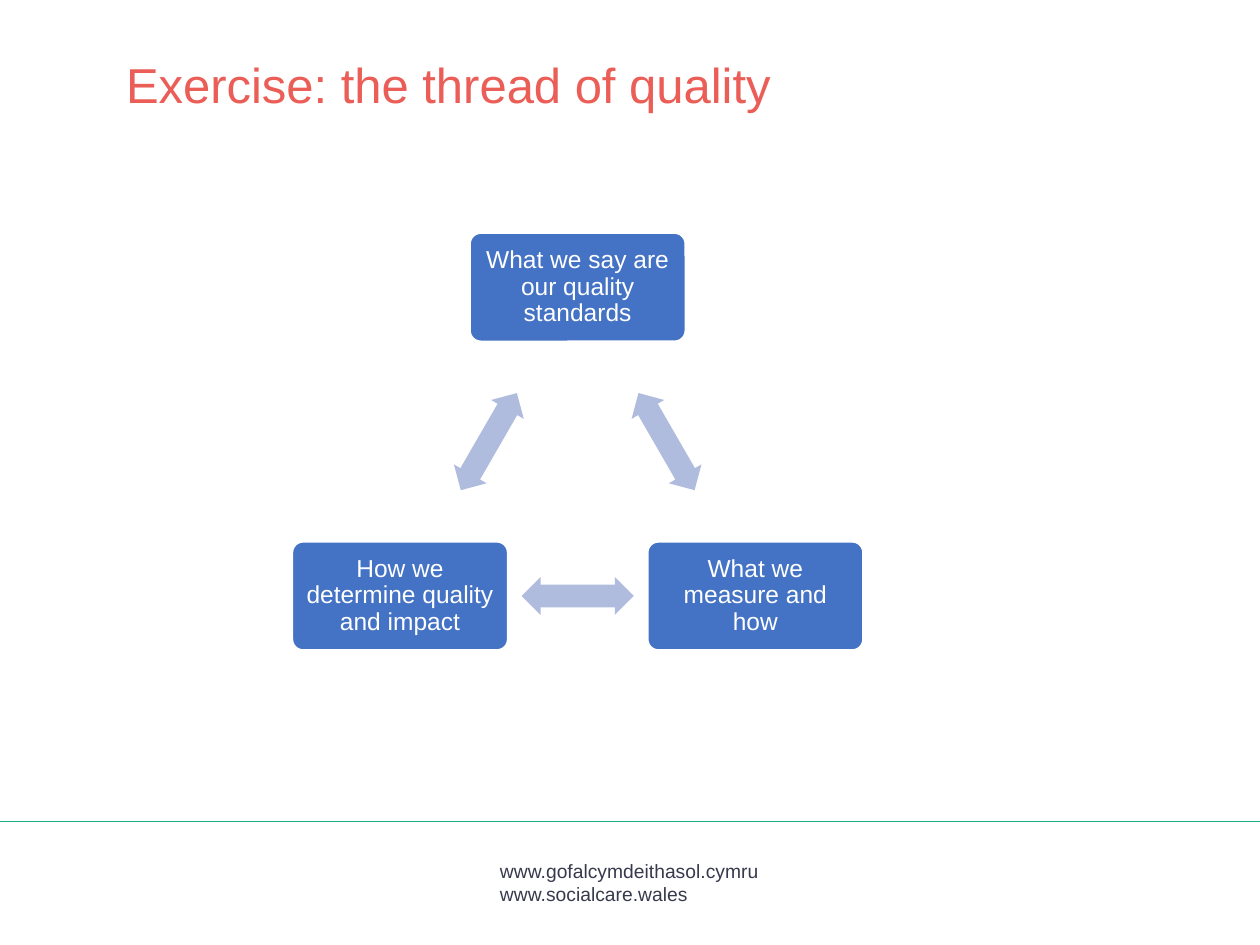
import math
from dataclasses import dataclass

import pptx
import pptx.dml.color
import pptx.enum.shapes
import pptx.enum.text
import pptx.oxml.ns
import pptx.util
from lxml import etree

Inches = pptx.util.Inches
Pt = pptx.util.Pt
SHAPE = pptx.enum.shapes.MSO_SHAPE
ANCHOR = pptx.enum.text.MSO_ANCHOR
ALIGN = pptx.enum.text.PP_ALIGN


def color(value):
    return pptx.dml.color.RGBColor.from_string(value)


@dataclass(frozen=True)
class Theme:
    font: str = "Arial"
    title: str = "EB5E57"
    node: str = "4472C4"
    arrow: str = "B0BCDE"
    white: str = "FFFFFF"
    rule: str = "16AD85"
    footer: str = "37394C"
    title_size: int = 28
    node_size: int = 14
    footer_size: int = 11


THEME = Theme()


def add_text(para, text, size, text_color):
    span = para.add_run()
    span.text = text
    span.font.name = THEME.font
    span.font.size = Pt(size)
    span.font.color.rgb = color(text_color)


def place_title(page, left, top, width, height, text):
    title = page.shapes.title
    title.left, title.top = Inches(left), Inches(top)
    title.width, title.height = Inches(width), Inches(height)
    frame = title.text_frame
    frame.word_wrap = True
    frame.vertical_anchor = ANCHOR.TOP
    para = frame.paragraphs[0]
    para.alignment = ALIGN.LEFT
    add_text(para, text, THEME.title_size, THEME.title)


def add_centred(page, kind, center, size, fill):
    left, top = (middle - length / 2 for middle, length in zip(center, size))
    shape = page.shapes.add_shape(kind, Inches(left), Inches(top), *map(Inches, size))
    shape.shadow.inherit = False
    shape.fill.solid()
    shape.fill.fore_color.rgb = color(fill)
    return shape


def add_node(page, center, size, text):
    node = add_centred(page, SHAPE.ROUNDED_RECTANGLE, center, size, THEME.node)
    node.adjustments[0] = 0.1
    node.line.color.rgb = color(THEME.white)
    node.line.width = Pt(1)
    frame = node.text_frame
    frame.word_wrap = True
    frame.vertical_anchor = ANCHOR.MIDDLE
    frame.margin_left = frame.margin_right = Inches(0.06)
    frame.margin_top = frame.margin_bottom = Inches(0.06)
    para = frame.paragraphs[0]
    para.alignment = ALIGN.CENTER
    para.line_spacing = 0.9
    add_text(para, text, THEME.node_size, THEME.white)


def add_cycle(page, left, top, width, height, labels):
    node_width, node_height = 1.71, 0.86
    middle = left + width / 2
    low = top + height - node_height / 2
    # Corners run clockwise from the top
    corners = [
        (middle, top + node_height / 2),
        (left + width - node_width / 2, low),
        (left + node_width / 2, low),
    ]
    for index, (start, label) in enumerate(zip(corners, labels)):
        add_node(page, start, (node_width, node_height), label)
        # Two-way arrow halfway along the side to the next corner
        end = corners[(index + 1) % len(corners)]
        halfway = [(a + b) / 2 for a, b in zip(start, end)]
        arrow = add_centred(page, SHAPE.LEFT_RIGHT_ARROW, halfway, (0.89, 0.3), THEME.arrow)
        arrow.adjustments[0] = 0.6
        arrow.adjustments[1] = 0.5
        arrow.line.fill.background()
        angle = math.atan2(end[1] - start[1], end[0] - start[0])
        arrow.rotation = round(math.degrees(angle)) % 360


def add_footer(page, left, top, width, height, addresses):
    # Rule across the page
    rule = page.shapes.add_connector(
        pptx.enum.shapes.MSO_CONNECTOR.STRAIGHT,
        Inches(0), Inches(6.52), Inches(10), Inches(6.52))
    rule.line.color.rgb = color(THEME.rule)
    rule.line.width = Pt(1)
    etree.SubElement(rule._element.spPr, pptx.oxml.ns.qn("a:effectLst"))

    # Web addresses
    box = page.shapes.add_textbox(Inches(left), Inches(top), Inches(width), Inches(height))
    frame = box.text_frame
    frame.word_wrap = True
    for index, address in enumerate(addresses):
        para = frame.add_paragraph() if index else frame.paragraphs[0]
        add_text(para, address, THEME.footer_size, THEME.footer)


def main():
    deck = pptx.Presentation()
    deck.slide_width, deck.slide_height = Inches(10), Inches(7.5)
    page = deck.slides.add_slide(deck.slide_layouts[5])
    add_footer(page, 3.87, 6.77, 2.26, 0.46,
               ["www.gofalcymdeithasol.cymru", "www.socialcare.wales"])
    place_title(page, 0.9, 0.38, 8.45, 0.94, "Exercise: the thread of quality")
    add_cycle(page, 2.32, 1.85, 4.53, 3.31, [
        "What we say are our quality standards",
        "What we measure and how",
        "How we determine quality and impact",
    ])
    deck.save("out.pptx")


if __name__ == "__main__":
    main()
